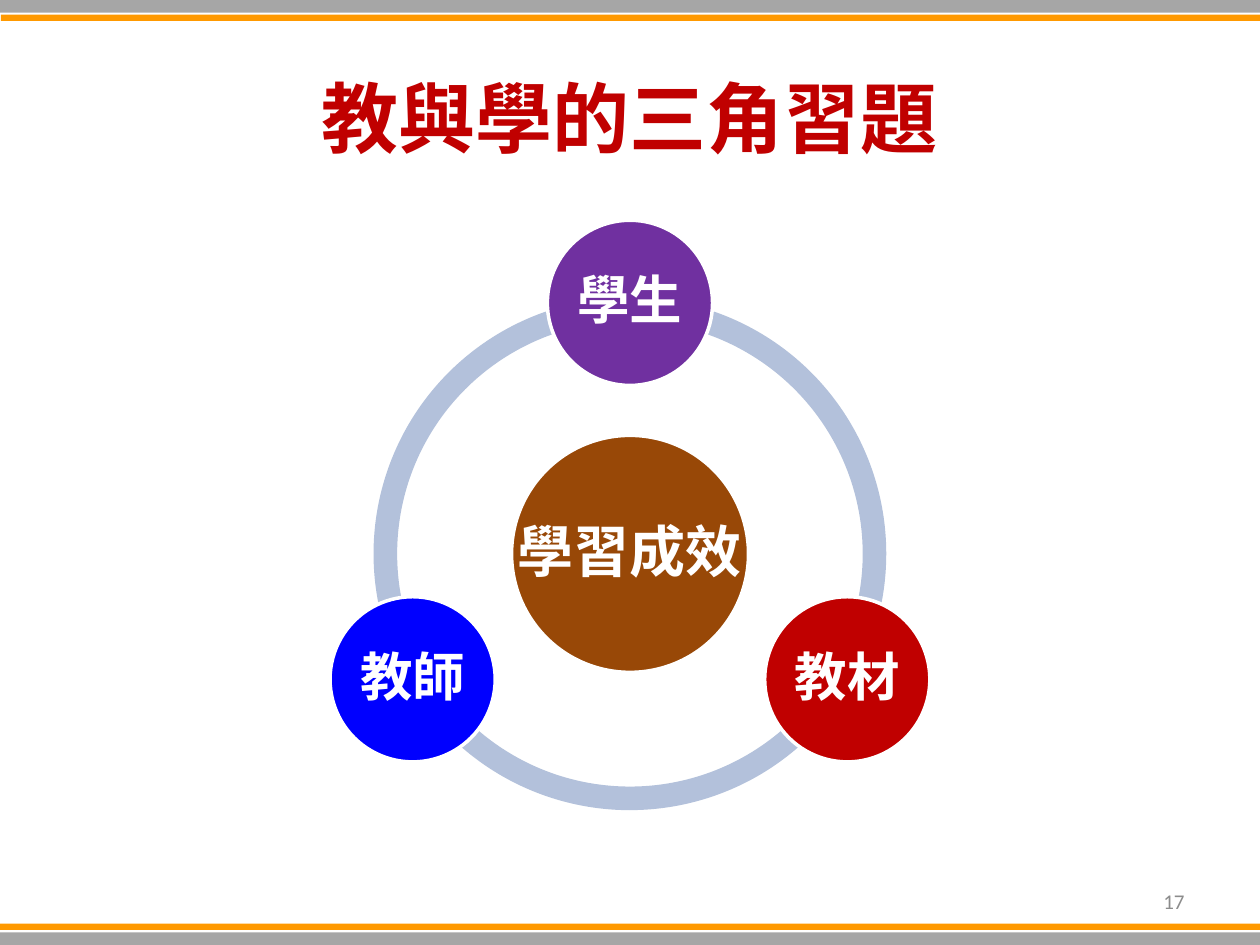
import math
from dataclasses import dataclass

from pptx import Presentation
from pptx.dml.color import RGBColor
from pptx.enum import shapes, text
from pptx.util import Pt


@dataclass(frozen=True)
class Theme:
    grey: str = "A6A6A6"
    orange: str = "FF9900"
    white: str = "FFFFFF"
    ring: str = "B3C1DB"
    red: str = "C00000"
    brown: str = "984807"
    purple: str = "7030A0"
    blue: str = "0000FF"
    number: str = "8C8C8C"
    font: str = "Calibri"
    hub_font: str = "Noto Sans CJK SC"
    title_size: int = 44
    hub_size: int = 32
    node_size: int = 30
    number_size: int = 12


THEME = Theme()
WIDTH, HEIGHT = 720, 540
CENTER_X, CENTER_Y = 360, 316.5
RING, HUB, NODE = 293, 135.4, 94.4
ORBIT = 143.4


def add_filled(slide, preset, left, top, width, height, color):
    shape = slide.shapes.add_shape(preset, Pt(left), Pt(top), Pt(width), Pt(height))
    shape.shadow.inherit = False
    shape.fill.solid()
    shape.fill.fore_color.rgb = RGBColor.from_string(color)
    shape.line.fill.background()
    return shape


def write(frame, words, size, color, align, bold=True, font=THEME.font):
    frame.text = words
    frame.vertical_anchor = text.MSO_ANCHOR.MIDDLE
    paragraph = frame.paragraphs[0]
    paragraph.alignment = align
    style = paragraph.runs[0].font
    style.name, style.size, style.bold = font, Pt(size), bold
    style.color.rgb = RGBColor.from_string(color)


def add_label(slide, left, top, width, height, *args, **style):
    box = slide.shapes.add_textbox(Pt(left), Pt(top), Pt(width), Pt(height))
    box.text_frame.word_wrap = True
    write(box.text_frame, *args, **style)


def add_bands(slide):
    bands = [(-0.5, 532.8, 7.2, THEME.grey), (0, 527.8, 3.6, THEME.orange),
             (0, 0, 7.2, THEME.grey), (0.5, 8.4, 3.6, THEME.orange)]
    for left, top, height, color in bands:
        add_filled(slide, shapes.MSO_SHAPE.RECTANGLE, left, top, WIDTH + 0.5, height, color)


def add_arc(slide, start, end):
    """Add one part of the ring, with angles in degrees clockwise from the right."""
    arc = add_filled(slide, shapes.MSO_SHAPE.BLOCK_ARC, CENTER_X - RING / 2,
                     CENTER_Y - RING / 2, RING, RING, THEME.ring)
    # Preset angles count 60000 per degree; adjustments are scaled by 100000.
    for index, value in enumerate((start * 0.6, end * 0.6, 0.046)):
        arc.adjustments[index] = value


def add_circle(slide, x, y, diameter, words, color, size, font=THEME.font):
    circle = add_filled(slide, shapes.MSO_SHAPE.OVAL, x - diameter / 2, y - diameter / 2,
                        diameter, diameter, color)
    circle.line.color.rgb = RGBColor.from_string(THEME.white)
    circle.line.width = Pt(2)
    frame = circle.text_frame
    frame.word_wrap = False
    frame.margin_left = frame.margin_right = Pt(2.9)
    frame.margin_top = frame.margin_bottom = Pt(2.9)
    write(frame, words, size, THEME.white, text.PP_ALIGN.CENTER, font=font)
    frame.paragraphs[0].line_spacing = 0.9


def add_cycle(slide):
    for start, end in [(90, 162), (18, 90), (162, 18)]:
        add_arc(slide, start, end)
    add_circle(slide, CENTER_X, CENTER_Y, HUB, "學習成效", THEME.brown,
               THEME.hub_size, THEME.hub_font)
    nodes = [("學生", THEME.purple), ("教材", THEME.red), ("教師", THEME.blue)]
    for index, (words, color) in enumerate(nodes):
        angle = math.radians(-90 + index * 360 / len(nodes))
        add_circle(slide, CENTER_X + ORBIT * math.cos(angle),
                   CENTER_Y + ORBIT * math.sin(angle), NODE, words, color, THEME.node_size)


def main():
    deck = Presentation()
    deck.slide_width, deck.slide_height = Pt(WIDTH), Pt(HEIGHT)
    slide = deck.slides.add_slide(deck.slide_layouts[6])
    add_bands(slide)
    add_label(slide, 36, 21.6, 648, 90, "教與學的三角習題", THEME.title_size,
              THEME.red, text.PP_ALIGN.CENTER)
    add_cycle(slide)
    add_label(slide, 516, 500.5, 168, 28.8, "17", THEME.number_size,
              THEME.number, text.PP_ALIGN.RIGHT, bold=False)
    deck.save("out.pptx")


if __name__ == "__main__":
    main()
